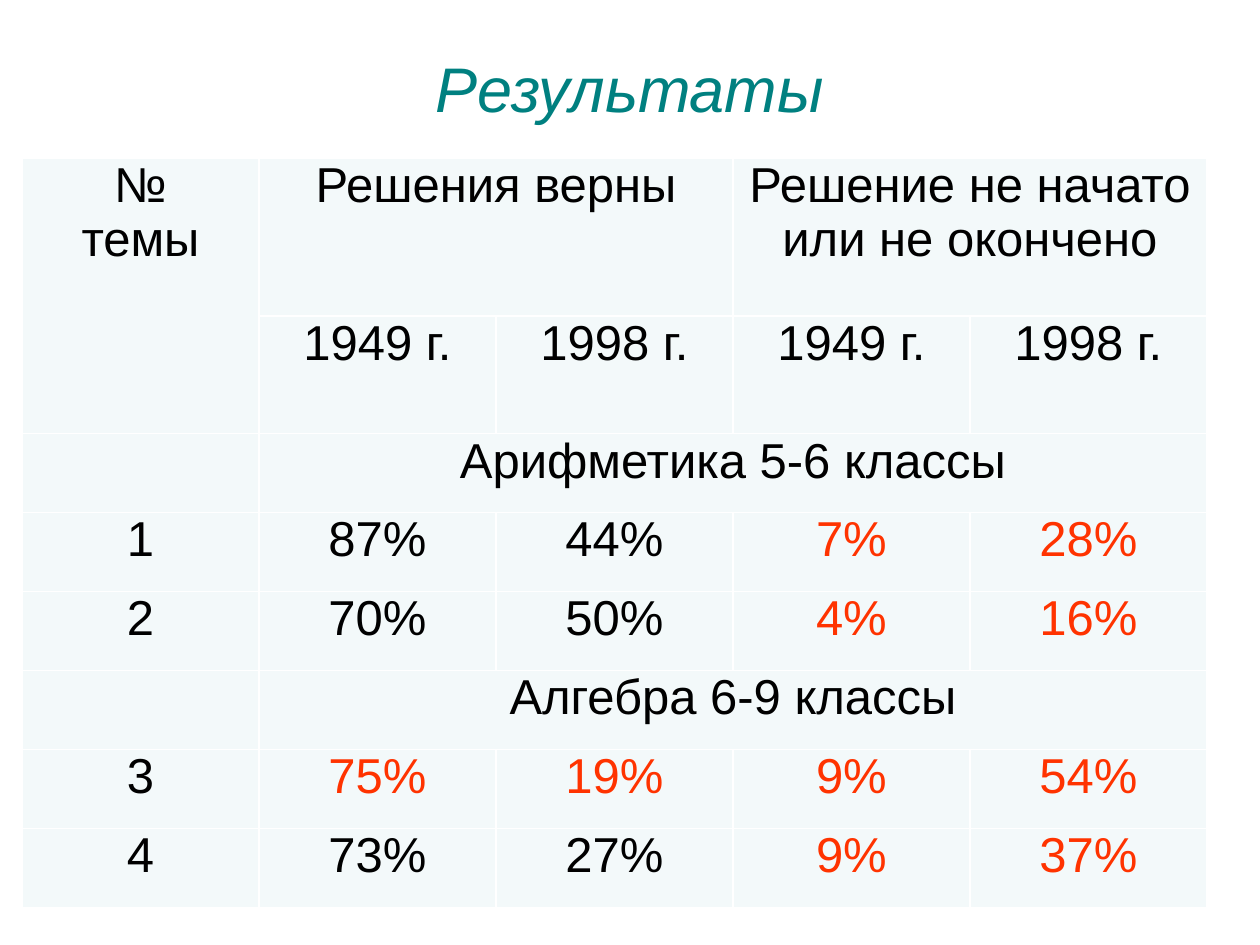
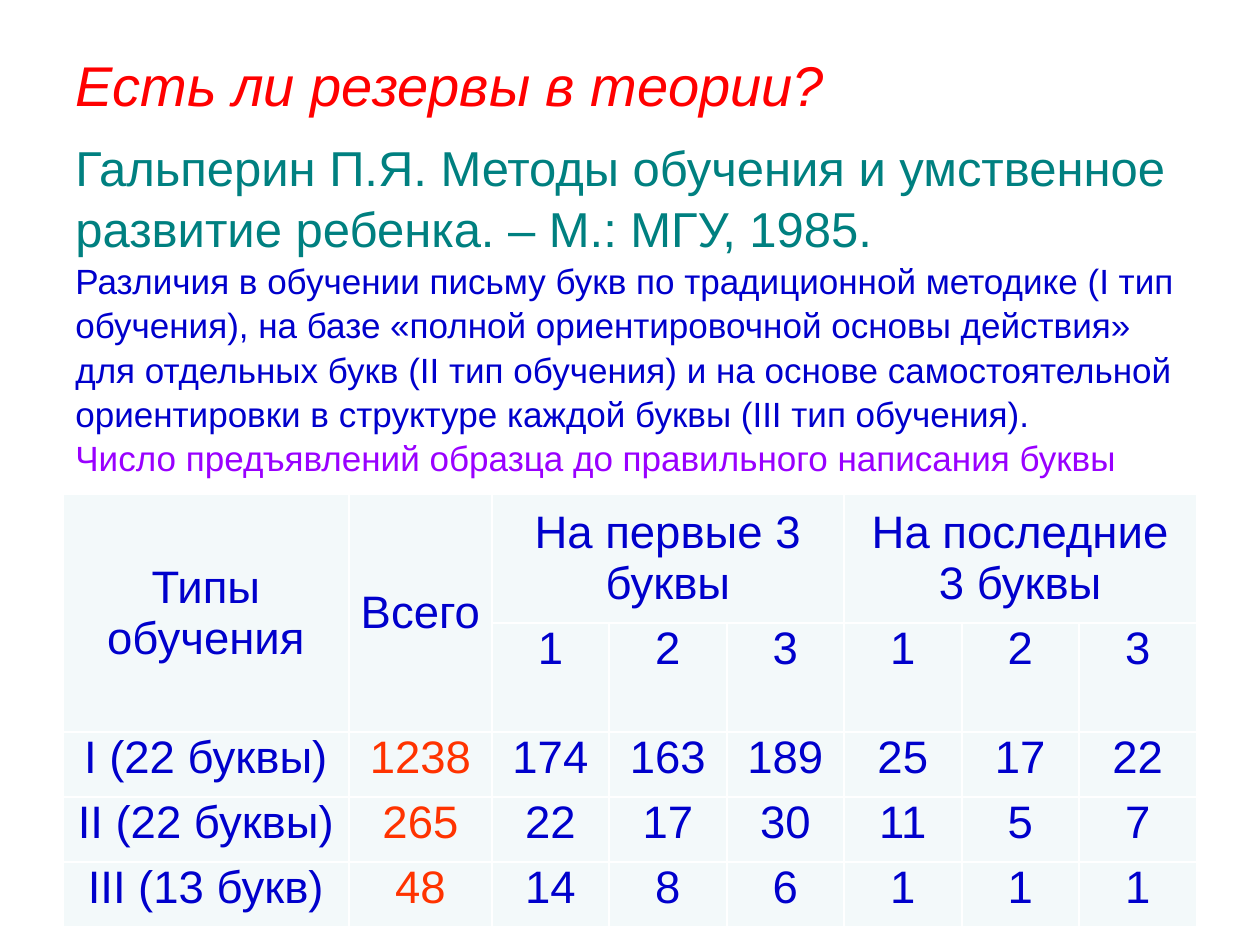
from lxml import etree
from pptx import Presentation
from pptx.dml.color import RGBColor
from pptx.enum.text import MSO_ANCHOR, PP_ALIGN
from pptx.oxml.ns import qn
from pptx.util import Pt

LEFT, CENTER = PP_ALIGN.LEFT, PP_ALIGN.CENTER
TOP, MIDDLE = MSO_ANCHOR.TOP, MSO_ANCHOR.MIDDLE
EMU_PER_PX = 914400 // 126
FONT = "Arial"
TEAL, RED, BLUE, VIOLET = "008080", "FF0000", "0000CC", "9900FF"
BLACK, WHITE, ACCENT, CELL_FILL = "000000", "FFFFFF", "FF3300", "F3F9FA"


def px(length):
    return length * EMU_PER_PX


def color(value):
    return RGBColor.from_string(value)


def style_paragraph(paragraph, size, font_color, align, italic=False):
    paragraph.alignment = align
    paragraph.font.name = FONT
    paragraph.font.size = Pt(size)
    paragraph.font.italic = italic
    paragraph.font.color.rgb = color(font_color)


def add_text_box(slide, left, top, width, height, anchor=TOP):
    shape = slide.shapes.add_textbox(px(left), px(top), px(width), px(height))
    frame = shape.text_frame
    frame.word_wrap = True
    frame.vertical_anchor = anchor
    return frame


def add_title(slide, text, top, height, size, font_color, align):
    frame = add_text_box(slide, 63, top, 1134, height, MIDDLE)
    frame.text = text
    style_paragraph(frame.paragraphs[0], size, font_color, align, italic=True)


def add_body(slide, top, height, entries):
    frame = add_text_box(slide, 63, top, 1134, height)
    frame.text = "\n".join(text for text, size, font_color in entries)
    for paragraph, (text, size, font_color) in zip(frame.paragraphs, entries):
        style_paragraph(paragraph, size, font_color, LEFT)
        paragraph.line_spacing = 1.05


def add_borders(cell):
    properties = cell._tc.get_or_add_tcPr()
    for side in ("lnL", "lnR", "lnT", "lnB"):
        line = etree.SubElement(properties, qn(f"a:{side}"), w=str(Pt(1)))
        fill = etree.SubElement(line, qn("a:solidFill"))
        etree.SubElement(fill, qn("a:srgbClr"), val=WHITE)


def fill_cell(cell, text, size, font_color, margin, anchor):
    add_borders(cell)
    cell.fill.solid()
    cell.fill.fore_color.rgb = color(CELL_FILL)
    cell.margin_left = cell.margin_right = px(margin)
    cell.margin_top = cell.margin_bottom = 0
    cell.vertical_anchor = anchor
    cell.text = text
    for paragraph in cell.text_frame.paragraphs:
        style_paragraph(paragraph, size, font_color, CENTER)


def add_table(slide, left, top, widths, heights, rows, merges, size,
              font_color, is_accent, margin, header_anchor=TOP):
    frame = slide.shapes.add_table(len(heights), len(widths), px(left), px(top),
                                   px(sum(widths)), px(sum(heights)))
    table = frame.table
    table.first_row = table.horz_banding = False
    for column, width in zip(table.columns, widths):
        column.width = px(width)
    for row, height in zip(table.rows, heights):
        row.height = px(height)
    for row_index, texts in enumerate(rows):
        anchor = header_anchor if row_index == 0 else TOP
        for column_index, text in enumerate(texts):
            text_color = ACCENT if is_accent(row_index, column_index) else font_color
            fill_cell(table.cell(row_index, column_index), text, size,
                      text_color, margin, anchor)
    for first, last in merges:
        table.cell(*first).merge(table.cell(*last))


def add_results_slide(slide):
    add_title(slide, "Результаты", 38, 98, 36, TEAL, CENTER)
    rows = [
        ["№\nтемы", "Решения верны", "", "Решение не начато\nили не окончено", ""],
        ["", "1949 г.", "1998 г.", "1949 г.", "1998 г."],
        ["", "Арифметика 5-6 классы", "", "", ""],
        ["1", "87%", "44%", "7%", "28%"],
        ["2", "70%", "50%", "4%", "16%"],
        ["", "Алгебра 6-9 классы", "", "", ""],
        ["3", "75%", "19%", "9%", "54%"],
        ["4", "73%", "27%", "9%", "37%"],
    ]
    merges = [((0, 0), (1, 0)), ((0, 1), (0, 2)), ((0, 3), (0, 4)),
              ((2, 1), (2, 4)), ((5, 1), (5, 4))]

    def is_accent(row, column):
        return row > 2 and column > 2 or row == 6 and column > 0

    add_table(slide, 22, 158, [237] * 5, [158, 109] + [79] * 6, rows, merges,
              28, BLACK, is_accent, 8)


def add_theory_slide(slide):
    add_title(slide, "Есть ли резервы в теории?", 42, 84, 32, RED, LEFT)
    add_body(slide, 128, 777, [
        ("Гальперин П.Я. Методы обучения и умственное развитие ребенка. "
         "– М.: МГУ, 1985.", 28, TEAL),
        ("Различия в обучении письму букв по традиционной методике (I тип обучения), "
         "на базе «полной ориентировочной основы действия» для отдельных букв "
         "(II тип обучения) и на основе самостоятельной ориентировки в структуре "
         "каждой буквы (III тип обучения).", 20, BLUE),
        ("Число предъявлений образца до правильного написания буквы", 20, VIOLET),
    ])
    rows = [
        ["Типы\nобучения", "Всего", "На первые 3\nбуквы", "", "",
         "На последние 3 буквы", "", ""],
        ["", "", "1", "2", "3", "1", "2", "3"],
        ["I (22 буквы)", "1238", "174", "163", "189", "25", "17", "22"],
        ["II (22 буквы)", "265", "22", "17", "30", "11", "5", "7"],
        ["III (13 букв)", "48", "14", "8", "6", "1", "1", "1"],
    ]
    merges = [((0, 0), (1, 0)), ((0, 1), (1, 1)),
              ((0, 2), (0, 4)), ((0, 5), (0, 7))]

    def is_accent(row, column):
        return row > 1 and column == 1

    add_table(slide, 63, 494, [286, 143] + [117, 118] * 3, [129, 102] + [65] * 3,
              rows, merges, 26, BLUE, is_accent, 9, MIDDLE)


def main():
    presentation = Presentation()
    presentation.slide_width = px(1260)
    presentation.slide_height = px(945)
    blank = presentation.slide_layouts[6]
    for add_content in (add_results_slide, add_theory_slide):
        add_content(presentation.slides.add_slide(blank))
    presentation.save("out.pptx")


if __name__ == "__main__":
    main()
